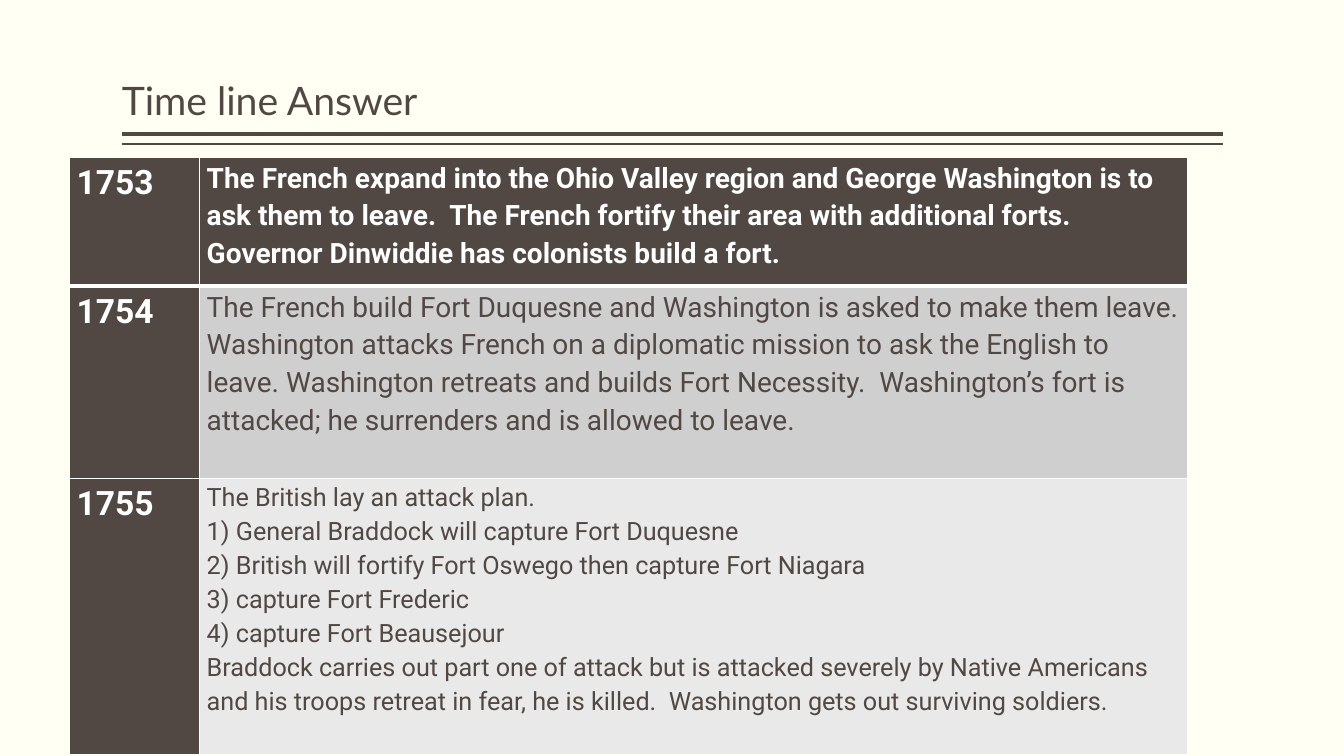
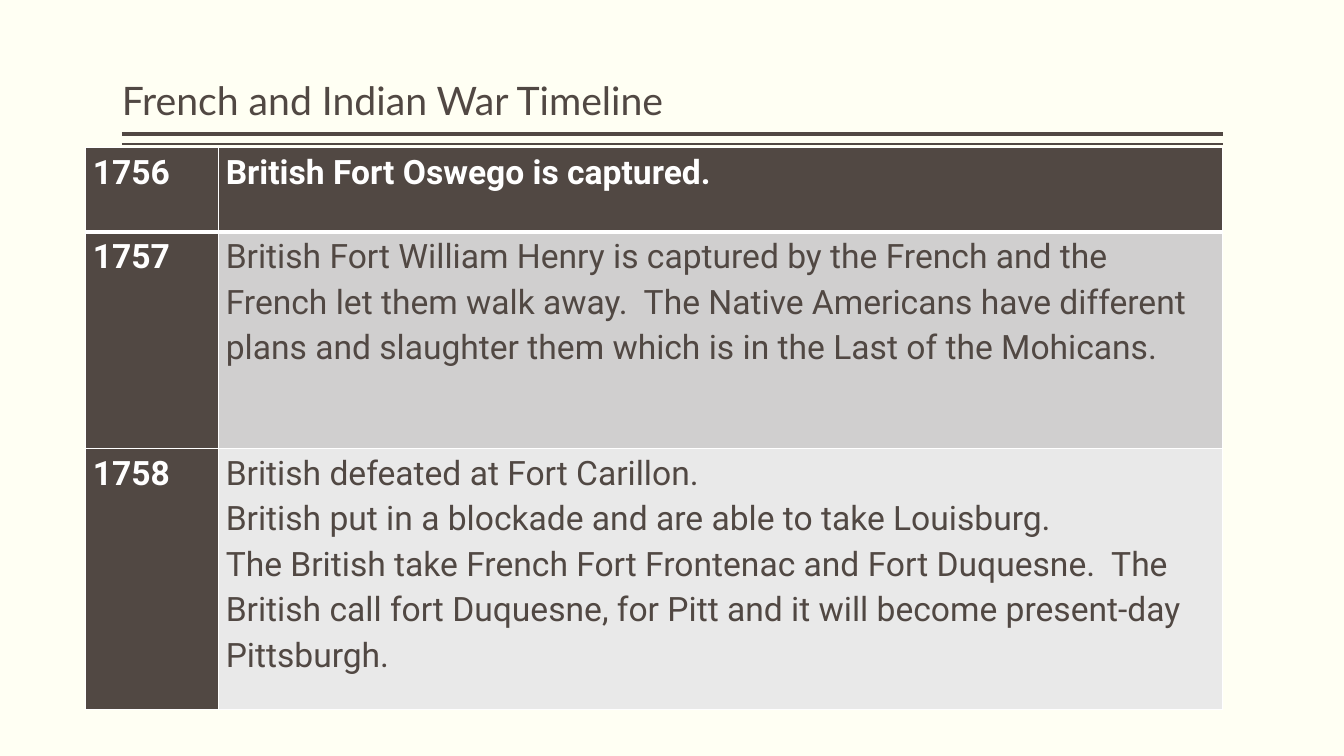
from lxml import etree
from pptx import Presentation
from pptx import util as u
from pptx.dml.color import RGBColor
from pptx.enum import shapes, text
from pptx.oxml import ns

BACKGROUND = RGBColor(0xFF, 0xFF, 0xF3)
BROWN = RGBColor(0x51, 0x48, 0x43)
WHITE = RGBColor(0xFF, 0xFF, 0xFF)
BANDS = [BROWN, RGBColor(0xD0, 0xCF, 0xCF), RGBColor(0xE9, 0xE9, 0xE9)]


class Deck:
    title_font, body_font = "Lato", "Roboto"
    left, width = 3.07, 27.74
    year_size = 24

    def __init__(self):
        self.prs = Presentation()
        self.prs.slide_width, self.prs.slide_height = u.Cm(33.87), u.Cm(19.05)
        self.slide = None

    def add_slide(self, title):
        self.slide = self.prs.slides.add_slide(self.prs.slide_layouts[6])
        fill = self.slide.background.fill
        fill.solid()
        fill.fore_color.rgb = BACKGROUND
        self.rule(3.38, 3)
        self.rule(3.63, 1)
        self.title(title)

    def rule(self, y, weight):
        sp = self.slide.shapes.add_connector(
            shapes.MSO_CONNECTOR.STRAIGHT, u.Cm(self.left), u.Cm(y),
            u.Cm(self.left + self.width), u.Cm(y))
        sp.line.color.rgb = BROWN
        sp.line.width = u.Pt(weight)
        etree.SubElement(sp._element.spPr, ns.qn("a:effectLst"))

    def title(self, words):
        sp = self.slide.shapes.add_textbox(
            u.Cm(self.left), u.Cm(0.2), u.Cm(self.width), u.Cm(3.05))
        tf = sp.text_frame
        tf.word_wrap = True
        tf.vertical_anchor = text.MSO_ANCHOR.BOTTOM
        tf.margin_left = tf.margin_right = 0
        p = tf.paragraphs[0]
        p.text = words
        self.style(p, self.title_font, 28, BROWN, 0.9)

    def style(self, p, font, size, color, spacing, bold=False):
        p.line_spacing = spacing
        p.font.name, p.font.size, p.font.bold = font, u.Pt(size), bold
        p.font.color.rgb = color

    def timeline(self, left, top, widths, heights, events):
        """Each event is a year, a text size and a list of paragraphs."""
        table = self.slide.shapes.add_table(
            len(events), 2, u.Cm(left), u.Cm(top),
            u.Cm(sum(widths)), u.Cm(sum(heights))).table
        table.first_row = table.horz_banding = False
        for column, width in zip(table.columns, widths):
            column.width = u.Cm(width)
        for i, (year, size, lines) in enumerate(events):
            table.rows[i].height = u.Cm(heights[i])
            self.cell(table.cell(i, 0), i, [year], self.year_size, BROWN, True)
            self.cell(table.cell(i, 1), i, lines, size, BANDS[i], i == 0)

    def cell(self, cell, row, lines, size, fill, bold):
        self.borders(cell, row)
        cell.fill.solid()
        cell.fill.fore_color.rgb = fill
        cell.margin_left = cell.margin_right = u.Cm(0.18)
        cell.margin_top = cell.margin_bottom = 0
        tf = cell.text_frame
        tf.text = "\n".join(lines)
        color = WHITE if fill == BROWN else BROWN
        for p in tf.paragraphs:
            self.style(p, self.body_font, size, color, 1.15, bold)

    def borders(self, cell, row):
        # The edge under the first row is heavier than the others
        weights = {"L": 1, "R": 1, "T": 3 if row == 1 else 1,
                   "B": 3 if row == 0 else 1}
        tc_pr = cell._tc.get_or_add_tcPr()
        for side, weight in weights.items():
            ln = etree.SubElement(tc_pr, ns.qn(f"a:ln{side}"), w=str(u.Pt(weight)))
            solid = etree.SubElement(ln, ns.qn("a:solidFill"))
            etree.SubElement(solid, ns.qn("a:srgbClr"), val=str(WHITE))


def main():
    deck = Deck()

    # 1753 to 1755
    deck.add_slide("Time line Answer")
    deck.timeline(1.75, 3.96, [3.28, 24.9], [3.25, 4.85, 6.96], [
        ("1753", 20, [
            "The French expand into the Ohio Valley region and George Washington "
            "is to ask them to leave.  The French fortify their area with "
            "additional forts. Governor Dinwiddie has colonists build a fort."]),
        ("1754", 20, [
            "The French build Fort Duquesne and Washington is asked to make them "
            "leave. Washington attacks French on a diplomatic mission to ask the "
            "English to leave. Washington retreats and builds Fort Necessity.  "
            "Washington’s fort is attacked; he surrenders and is allowed to leave."]),
        ("1755", 18, [
            "The British lay an attack plan.",
            "1) General Braddock will capture Fort Duquesne",
            "2) British will fortify Fort Oswego then capture Fort Niagara",
            "3) capture Fort Frederic",
            "4) capture Fort Beausejour",
            "Braddock carries out part one of attack but is attacked severely by "
            "Native Americans and his troops retreat in fear, he is killed.  "
            "Washington gets out surviving soldiers."]),
    ])

    # 1756 to 1758
    deck.add_slide("French and Indian War Timeline")
    deck.timeline(2.16, 3.71, [3.35, 25.3], [2.13, 5.46, 6.58], [
        ("1756", 24, ["British Fort Oswego is captured."]),
        ("1757", 24, [
            "British Fort William Henry is captured by the French and the French "
            "let them walk away.  The Native Americans have different plans and "
            "slaughter them which is in the Last of the Mohicans."]),
        ("1758", 24, [
            "British defeated at Fort Carillon.",
            "British put in a blockade and are able to take Louisburg.",
            "The British take French Fort Frontenac and Fort Duquesne.  The "
            "British call fort Duquesne, for Pitt and it will become present-day "
            "Pittsburgh."]),
    ])

    deck.prs.save("out.pptx")


if __name__ == "__main__":
    main()
